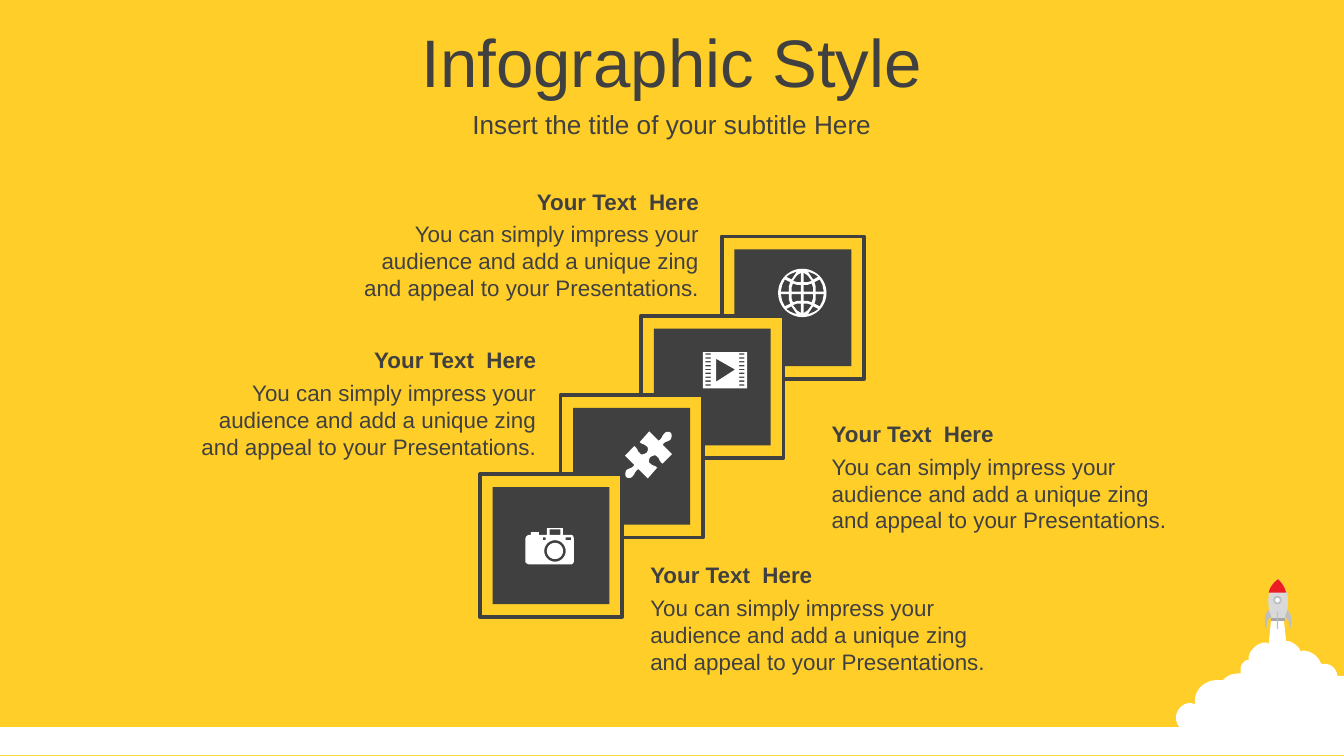
from math import cos, pi, sin

from pptx import Presentation
from pptx.dml.color import RGBColor
from pptx.enum.shapes import MSO_SHAPE
from pptx.enum.text import MSO_ANCHOR, PP_ALIGN
from pptx.util import Pt

RECTANGLE, OVAL = MSO_SHAPE.RECTANGLE, MSO_SHAPE.OVAL
LEFT, CENTER, RIGHT = PP_ALIGN.LEFT, PP_ALIGN.CENTER, PP_ALIGN.RIGHT
TOP, MIDDLE = MSO_ANCHOR.TOP, MSO_ANCHOR.MIDDLE

THEME = {
    "font": "Arial", "title": 36, "subtitle": 14, "body": 12,
    "yellow": "FFCE29", "dark": "404040", "white": "FFFFFF", "red": "ED1C24",
    "hull": "D9D9D9", "base": "A6A6A6", "metal": "BFBFBF",
}
COLUMNS, ROWS = 10, 5.62

presentation = Presentation()
presentation.slide_width, presentation.slide_height = 9144000, 5143500
CELL = presentation.slide_width / COLUMNS
slide = presentation.slides.add_slide(presentation.slide_layouts[6])
slide.background.fill.solid()
slide.background.fill.fore_color.rgb = RGBColor.from_string(THEME["yellow"])


def circle(x, y, radius, sides=48):
    return [(x + radius * cos(2 * pi * i / sides), y + radius * sin(2 * pi * i / sides))
            for i in range(sides)]


def trace(contours, color):
    """Fill contours in grid units, where inner ones are holes.

    Two points are opposite corners of a rectangle; a six-number item is a Bézier curve.
    """
    builder = None
    for contour in contours:
        if len(contour) == 2:
            (x1, y1), (x2, y2) = contour
            contour = [(x1, y1), (x2, y1), (x2, y2), (x1, y2)]
        points = [contour[0]]
        for item in contour[1:]:
            if len(item) == 2:
                points.append(item)
                continue
            controls = [points[-1], item[:2], item[2:4], item[4:]]
            for t in (step / 8 for step in range(1, 9)):
                weights = ((1 - t) ** 3, 3 * t * (1 - t) ** 2, 3 * t * t * (1 - t), t ** 3)
                points.append(tuple(sum(w * c[axis] for w, c in zip(weights, controls))
                                    for axis in (0, 1)))
        points = [(round(x * CELL), round(y * CELL)) for x, y in points]
        if builder is None:
            builder = slide.shapes.build_freeform(*points[0])
        else:
            builder.move_to(*points[0])
        builder.add_line_segments(points[1:], close=True)
    shape = builder.convert_to_shape()
    shape.shadow.inherit = False
    shape.fill.solid()
    shape.fill.fore_color.rgb = RGBColor.from_string(THEME[color])
    shape.line.fill.background()


# Rocket and its smoke
smoke = [
    (9.46, 4.59), (9.55, 4.59), (9.57, 4.77), (9.59, 4.77),
    (9.62, 4.78, 9.65, 4.8, 9.67, 4.83), (9.68, 4.85), (9.69, 4.84),
    (9.75, 4.84, 9.81, 4.88, 9.83, 4.94), (9.86, 4.94),
    (9.9, 4.94, 9.94, 4.97, 9.95, 5.02), (9.95, 5.03), (10, 5.03), (10, 5.6), (9.98, 5.6),
    (9.94, 5.6, 9.9, 5.59, 9.87, 5.57), (9.86, 5.56), (9.85, 5.57),
    (9.83, 5.58, 9.81, 5.59, 9.78, 5.59), (9.75, 5.59, 9.73, 5.57, 9.71, 5.55),
    (9.69, 5.54), (9.69, 5.55), (9.67, 5.58, 9.64, 5.59, 9.6, 5.59),
    (9.57, 5.59, 9.54, 5.58, 9.52, 5.56), (9.51, 5.55), (9.49, 5.56),
    (9.45, 5.59, 9.4, 5.61, 9.34, 5.61), (9.23, 5.61, 9.17, 5.56, 9.13, 5.51),
    (9.11, 5.53, 9.07, 5.54, 9.04, 5.53), (9, 5.52, 8.94, 5.5, 8.93, 5.45),
    (8.93, 5.43), (8.92, 5.44), (8.91, 5.45, 8.89, 5.45, 8.86, 5.45),
    (8.8, 5.45, 8.75, 5.4, 8.75, 5.34), (8.75, 5.28, 8.8, 5.23, 8.86, 5.23),
    (8.89, 5.24), (8.89, 5.22), (8.89, 5.13, 8.96, 5.06, 9.06, 5.06), (9.1, 5.06),
    (9.11, 5.05), (9.14, 5.02, 9.18, 5.01, 9.23, 5.01), (9.23, 4.98),
    (9.23, 4.95, 9.25, 4.92, 9.28, 4.91), (9.29, 4.91), (9.29, 4.89),
    (9.3, 4.83, 9.36, 4.78, 9.42, 4.78), (9.44, 4.79),
]
hull = [(9.46, 4.62), (9.44, 4.53, 9.4, 4.4, 9.51, 4.31), (9.62, 4.41, 9.58, 4.54, 9.56, 4.62)]
nose = [(9.51, 4.31), (9.54, 4.34, 9.56, 4.37, 9.57, 4.41), (9.44, 4.41),
        (9.45, 4.37, 9.47, 4.34, 9.51, 4.31)]
left_fin = [(9.44, 4.54), (9.46, 4.59), (9.42, 4.61, 9.43, 4.66, 9.42, 4.68),
            (9.41, 4.65, 9.4, 4.57, 9.44, 4.54)]
right_fin = [tuple(19.02 - value if i % 2 == 0 else value for i, value in enumerate(item))
             for item in left_fin]
for outline, color in [(smoke, "white"), (hull, "hull"), ([(9.46, 4.6), (9.56, 4.62)], "base"),
                       (nose, "red"), (left_fin, "metal"), (right_fin, "metal")]:
    trace([outline], color)

# Ground, rocket details and the staircase of framed squares
FRAME, CORE = 1.06, 0.87
INSET = (FRAME - CORE) / 2
panels = [
    (RECTANGLE, 0, 5.41, COLUMNS, ROWS - 5.41, "white", None, 0),
    (OVAL, 9.48, 4.44, 0.05, 0.05, "white", "metal", 1),
    (RECTANGLE, 9.5, 4.55, 0.01, 0.13, "metal", None, 0),
]
for step in range(4):
    x, y = 5.37 - 0.6 * step, 1.76 + 0.59 * step
    panels.append((RECTANGLE, x, y, FRAME, FRAME, "yellow", "dark", 2))
    panels.append((RECTANGLE, x + INSET, y + INSET, CORE, CORE, "dark", None, 0))
for kind, x, y, width, height, fill, line, weight in panels:
    shape = slide.shapes.add_shape(kind, *(round(v * CELL) for v in (x, y, width, height)))
    shape.shadow.inherit = False
    shape.fill.solid()
    shape.fill.fore_color.rgb = RGBColor.from_string(THEME[fill])
    if line:
        shape.line.color.rgb = RGBColor.from_string(THEME[line])
        shape.line.width = Pt(weight)
    else:
        shape.line.fill.background()

# Globe: one quadrant of openings mirrored about both axes
GLOBE_X, GLOBE_Y = 5.97, 2.18
openings = [
    [(0.01, 0.01), (0.08, 0.01), (0.08, 0.04), (0.07, 0.07), (0.04, 0.06), (0.01, 0.06)],
    [(0.1, 0.01), (0.16, 0.01), (0.15, 0.06), (0.13, 0.1), (0.09, 0.08), (0.1, 0.05)],
    [(0.01, 0.08), (0.04, 0.08), (0.07, 0.09), (0.04, 0.13), (0.01, 0.15)],
    [(0.08, 0.1), (0.12, 0.12), (0.09, 0.14), (0.04, 0.16), (0.06, 0.13)],
]
globe = [circle(GLOBE_X, GLOBE_Y, 0.18)]
for side_x in (-1, 1):
    for side_y in (-1, 1):
        globe += [[(GLOBE_X + side_x * x, GLOBE_Y + side_y * y) for x, y in opening]
                  for opening in openings]

# Film: play triangle between two columns of perforations
film = [[(5.23, 2.62), (5.56, 2.89)], [(5.33, 2.67), (5.33, 2.84), (5.47, 2.75)]]
for row in range(9):
    y = 2.63 + 0.23 / 8 * row
    film += [[(x, y), (x + 0.04, y + 0.01)] for x in (5.25, 5.5)]

# Puzzle piece: one half turned about the centre
half = [
    (4.99, 3.22), (5, 3.23, 5, 3.25, 4.99, 3.27), (4.97, 3.29, 4.95, 3.28, 4.93, 3.31),
    (5, 3.38), (4.93, 3.45), (4.9, 3.43, 4.91, 3.41, 4.89, 3.4),
    (4.88, 3.38, 4.86, 3.39, 4.84, 3.4), (4.83, 3.41, 4.82, 3.44, 4.84, 3.45),
    (4.86, 3.47, 4.87, 3.46, 4.89, 3.48), (4.82, 3.56), (4.75, 3.49),
    (4.72, 3.51, 4.73, 3.52, 4.71, 3.54), (4.7, 3.56, 4.67, 3.56, 4.66, 3.55),
]
puzzle = half + [tuple((9.65, 6.77)[i % 2] - value for i, value in enumerate(item))
                 for item in half[1:]]

camera = [
    [(4.08, 3.93), (4.18, 3.93), (4.19, 3.93, 4.19, 3.93, 4.19, 3.94), (4.19, 3.98),
     (4.25, 3.98), (4.26, 3.98, 4.27, 3.99, 4.27, 4.01), (4.27, 4.18),
     (4.27, 4.19, 4.26, 4.2, 4.25, 4.2), (3.94, 4.2), (3.93, 4.2, 3.91, 4.19, 3.91, 4.18),
     (3.91, 4.01), (3.91, 3.99, 3.93, 3.98, 3.94, 3.98), (3.95, 3.98), (3.95, 3.96),
     (4.01, 3.96), (4.01, 3.98), (4.07, 3.98), (4.07, 3.94),
     (4.07, 3.93, 4.07, 3.93, 4.08, 3.93)],
    circle(4.13, 4.1, 0.08), circle(4.13, 4.1, 0.06),
    [(4.04, 4), (4.06, 4.02)], [(4.21, 4), (4.25, 4.02)], [(4.09, 3.94), (4.17, 3.98)],
]
for icon in (globe, film, [puzzle], camera):
    trace(icon, "white")

# Headings and captions
texts = [
    ("Infographic Style", 0, 0.14, COLUMNS, 0.63, "title", False, CENTER, MIDDLE),
    ("Insert the title of your subtitle Here", 0, 0.77, COLUMNS, 0.31, "subtitle", False,
     CENTER, MIDDLE),
]
CAPTION = "You can simply impress your audience and add a unique zing and appeal to your Presentations."
for x, y, align in [(4.74, 4.13, LEFT), (6.09, 3.08, LEFT), (1.26, 2.53, RIGHT), (2.47, 1.35, RIGHT)]:
    texts.append(("Your Text  Here", x, y, 2.83, 0.3, "body", True, align, TOP))
    texts.append((CAPTION, x, y + 0.24, 2.83, 0.71, "body", False, align, TOP))
for text, x, y, width, height, size, bold, align, anchor in texts:
    box = slide.shapes.add_textbox(*(round(v * CELL) for v in (x, y, width, height)))
    frame = box.text_frame
    frame.word_wrap = True
    frame.vertical_anchor = anchor
    paragraph = frame.paragraphs[0]
    paragraph.alignment = align
    run = paragraph.add_run()
    run.text = text
    run.font.name = THEME["font"]
    run.font.size = Pt(THEME[size])
    run.font.bold = bold
    run.font.color.rgb = RGBColor.from_string(THEME["dark"])

presentation.save("out.pptx")
